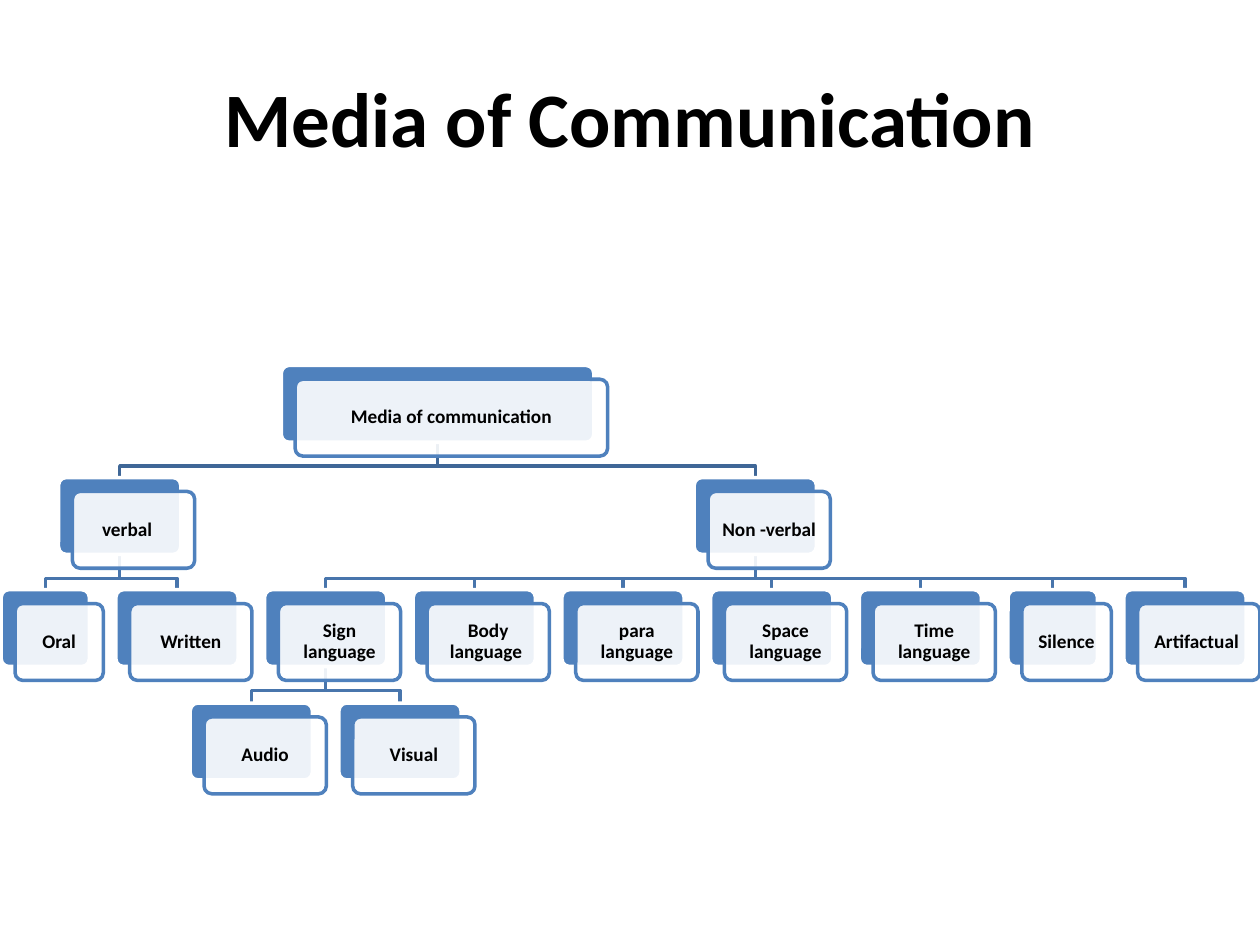
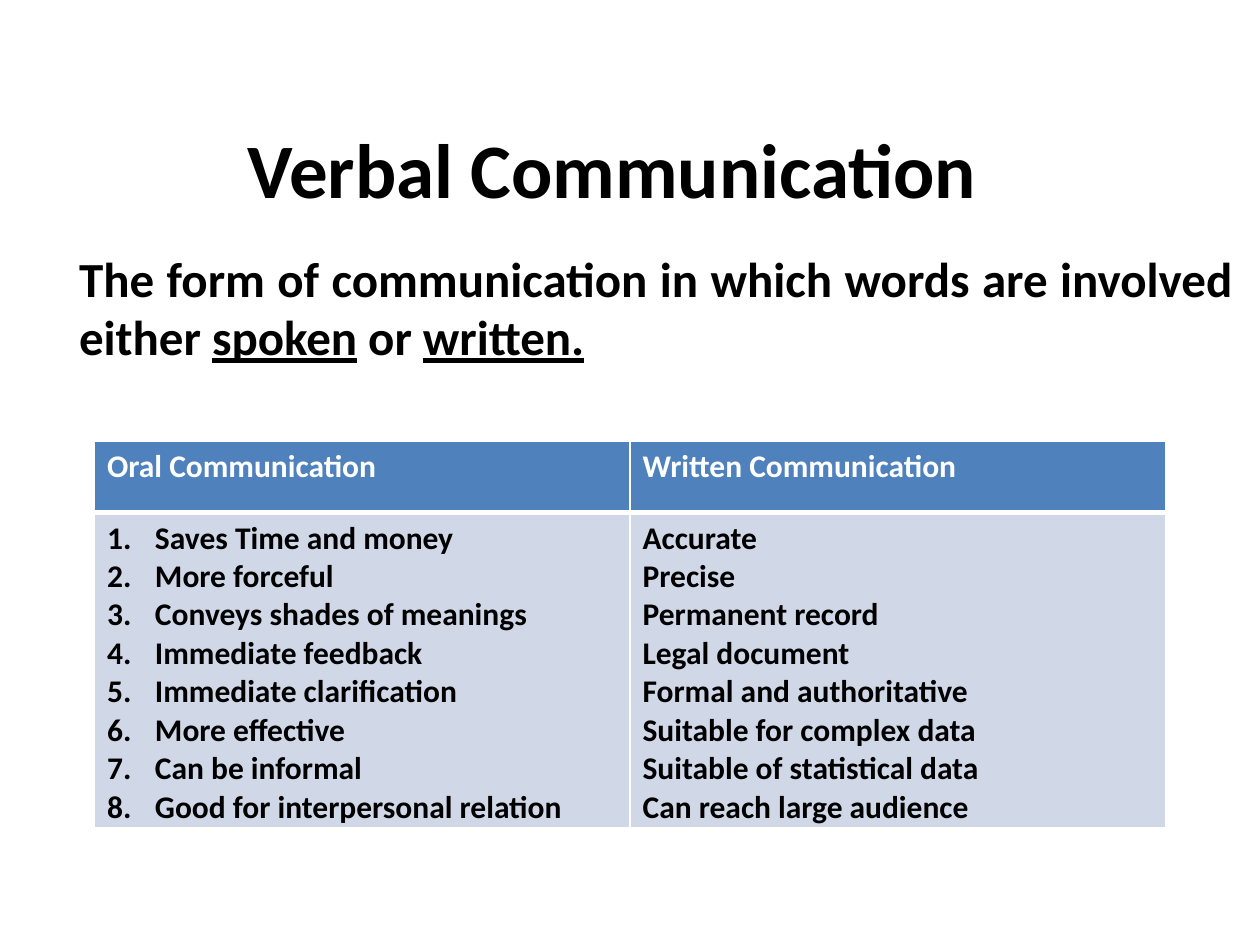
from dataclasses import dataclass

from lxml import etree
from pptx import Presentation
from pptx.dml.color import RGBColor as Rgb
from pptx.enum.shapes import MSO_SHAPE as Shape
from pptx.enum.text import MSO_ANCHOR as Anchor, PP_ALIGN as Align
from pptx.oxml.ns import qn
from pptx.util import Inches, Pt


@dataclass(frozen=True)
class Theme:
    font: str = "Calibri"
    black: Rgb = Rgb.from_string("000000")
    white: Rgb = Rgb.from_string("FFFFFF")
    blue: Rgb = Rgb.from_string("4F81BD")
    upper_branch: Rgb = Rgb.from_string("3F6797")
    lower_branch: Rgb = Rgb.from_string("4875AC")
    pale_blue: Rgb = Rgb.from_string("D0D8E8")
    title_size: Pt = Pt(44)
    body_size: Pt = Pt(28)
    table_size: Pt = Pt(18)
    card_size: Pt = Pt(11)
    line_width: Pt = Pt(2)


theme = Theme()


def style_text(paragraph, size, color=theme.black, align=Align.LEFT):
    paragraph.alignment = align
    font = paragraph.font
    font.name, font.size, font.bold = theme.font, size, True
    font.color.rgb = color


def add_title(slide, text, left, top, width, height):
    box = slide.shapes.add_textbox(Inches(left), Inches(top), Inches(width), Inches(height))
    frame = box.text_frame
    frame.word_wrap = True
    frame.vertical_anchor = Anchor.MIDDLE
    frame.text = text
    style_text(frame.paragraphs[0], theme.title_size, align=Align.CENTER)


presentation = Presentation()
presentation.slide_width, presentation.slide_height = Inches(10), Inches(7.5)
blank_layout = presentation.slide_layouts[6]

# Slide 1: tree of communication media
slide = presentation.slides.add_slide(blank_layout)
add_title(slide, "Media of Communication", 0.5, 0.3, 9, 1.25)

row_tops = [2.9, 3.79, 4.68, 5.58]
card_width, card_height, card_gap = 0.97, 0.61, 0.21
card_offset = 0.11
elbow_drop = 0.19

# Cards: name -> (centre, row, width); the third row sets all the centres
third_row = ["Oral", "Written", "Sign language", "Body language ", "para language",
             "Space language", "Time language", "Silence", "Artifactual "]
narrow_widths = {"Oral": 0.7, "Silence": 0.71}
cards = {}
left = 0.01
for name in third_row:
    width = narrow_widths.get(name, card_width)
    cards[name] = (left + width / 2, 2, width)
    left += width + card_gap

children = {
    "verbal\t": third_row[:2],
    "Non -verbal": third_row[2:],
    "Media of communication": ["verbal\t", "Non -verbal"],
    "Sign language": ["Audio", "Visual"],
}
for name, row, width in [("verbal\t", 1, card_width), ("Non -verbal", 1, card_width),
                         ("Media of communication", 0, 2.48)]:
    first, last = cards[children[name][0]], cards[children[name][-1]]
    center = (first[0] - first[2] / 2 + last[0] + last[2] / 2) / 2
    cards[name] = (center, row, width)
half_pitch = (card_width + card_gap) / 2
for name, side in [("Audio", -1), ("Visual", 1)]:
    cards[name] = (cards["Sign language"][0] + side * half_pitch, 3, card_width)

# Branches run behind the cards
for parent, names in children.items():
    parent_center, parent_row, _ = cards[parent]
    start = row_tops[parent_row] + card_height
    for name in names:
        child_center, child_row, _ = cards[name]
        elbow = start + elbow_drop
        builder = slide.shapes.build_freeform(Inches(parent_center), Inches(start))
        builder.add_line_segments(
            [(Inches(x), Inches(y)) for x, y in [(parent_center, elbow), (child_center, elbow),
                                                 (child_center, row_tops[child_row])]],
            close=False)
        branch = builder.convert_to_shape()
        branch.shadow.inherit = False
        branch.fill.background()
        branch.line.color.rgb = theme.lower_branch if parent_row else theme.upper_branch
        branch.line.width = theme.line_width

# Each card is a blue back plate and a translucent front plate with the text
for name, (center, row, width) in cards.items():
    for offset, fill, outline in [(0, theme.blue, theme.white),
                                  (card_offset, theme.white, theme.blue)]:
        plate = slide.shapes.add_shape(
            Shape.ROUNDED_RECTANGLE, Inches(center - width / 2 + offset),
            Inches(row_tops[row] + offset), Inches(width), Inches(card_height))
        plate.adjustments[0] = 0.1
        plate.shadow.inherit = False
        plate.fill.solid()
        plate.fill.fore_color.rgb = fill
        plate.line.color.rgb = outline
        plate.line.width = theme.line_width
    fill_color = plate._element.spPr.find(qn("a:solidFill")).find(qn("a:srgbClr"))
    etree.SubElement(fill_color, qn("a:alpha"), val="90000")
    frame = plate.text_frame
    frame.word_wrap = True
    frame.vertical_anchor = Anchor.MIDDLE
    frame.margin_left = frame.margin_right = Inches(0.05)
    frame.margin_top = frame.margin_bottom = Inches(0.05)
    frame.text = name
    paragraph = frame.paragraphs[0]
    paragraph.line_spacing = 0.9
    style_text(paragraph, theme.card_size, align=Align.CENTER)

# Slide 2: definition and comparison table
slide = presentation.slides.add_slide(blank_layout)
add_title(slide, "Verbal Communication", 0, 0.83, 9.72, 1)

hanging = {"marL": str(Inches(0.38)), "indent": str(-Inches(0.38))}

# Definition
box = slide.shapes.add_textbox(Inches(0.15), Inches(1.92), Inches(9.73), Inches(1.3))
box.text_frame.word_wrap = True
paragraph = box.text_frame.paragraphs[0]
style_text(paragraph, theme.body_size, align=Align.JUSTIFY)
paragraph._p.get_or_add_pPr().attrib.update(hanging)
for text, underlined in [
        ("\tThe form of communication in which words are involved either ", False),
        ("spoken", True), (" or ", False), ("written.", True)]:
    run = paragraph.add_run()
    run.text = text
    run.font.underline = underlined

# Table: header and list of each column
columns = [
    ("Oral Communication", [
        "Saves Time and money", "More forceful", "Conveys shades of meanings",
        "Immediate feedback", "Immediate clarification", "More effective",
        "Can be informal", "Good for interpersonal relation"]),
    ("Written Communication", [
        "Accurate", "Precise", "Permanent record", "Legal document",
        "Formal and authoritative", "Suitable for complex data",
        "Suitable of statistical data", "Can reach large audience"]),
]
table = slide.shapes.add_table(2, 2, Inches(0.75), Inches(3.5), Inches(8.5), Inches(3)).table
table.horz_banding = False
table.rows[0].height, table.rows[1].height = Inches(0.57), Inches(2.43)

for column, (header, items) in enumerate(columns):
    for row, lines in enumerate([[header], items]):
        cell = table.cell(row, column)
        # The rule between header and lists is thicker than the others
        for side in ["L", "R", "T", "B"]:
            is_thick = (row, side) in [(0, "B"), (1, "T")]
            border = etree.SubElement(cell._tc.get_or_add_tcPr(), qn(f"a:ln{side}"),
                                      w=str(Pt(3 if is_thick else 1)))
            border_fill = etree.SubElement(border, qn("a:solidFill"))
            etree.SubElement(border_fill, qn("a:srgbClr"), val=str(theme.white))
        cell.fill.solid()
        cell.fill.fore_color.rgb = theme.pale_blue if row else theme.blue
        cell.text = "\n".join(lines)
        for paragraph in cell.text_frame.paragraphs:
            style_text(paragraph, theme.table_size, theme.black if row else theme.white)
            if row == 1 and column == 0:
                properties = paragraph._p.get_or_add_pPr()
                properties.attrib.update(hanging)
                numbering = etree.Element(qn("a:buAutoNum"), type="arabicPeriod")
                properties.insert(0, numbering)

presentation.save("out.pptx")
